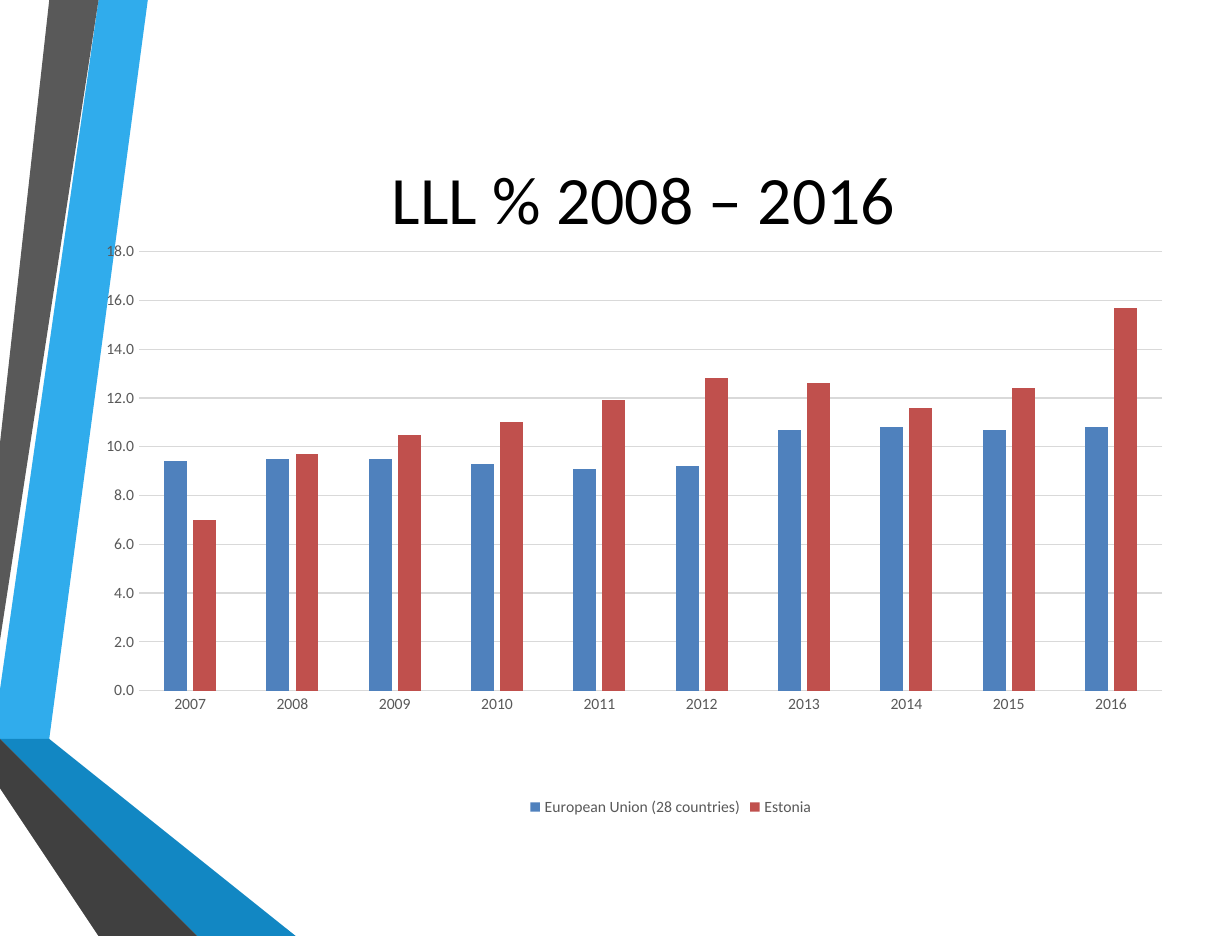
from dataclasses import dataclass
from lxml.etree import SubElement
from pptx import Presentation
from pptx.chart.data import CategoryChartData
from pptx.dml.color import RGBColor
from pptx.enum.chart import XL_CHART_TYPE, XL_LEGEND_POSITION, XL_TICK_MARK
from pptx.enum.text import MSO_ANCHOR, PP_ALIGN
from pptx.oxml import parse_xml
from pptx.oxml.ns import nsdecls, qn
from pptx.util import Cm, Pt


@dataclass(frozen=True)
class Theme:
    """Colours, font and type sizes of the slide."""
    font: str = "Calibri"
    ink: str = "000000"
    label: str = "595959"
    grid: str = "D9D9D9"
    union: str = "4F81BD"
    nation: str = "C0504D"
    sky: str = "30ACEC"
    blue: str = "1287C3"
    navy: str = "0C5A82"
    ash: str = "595959"
    coal: str = "404040"
    soot: str = "262626"
    head: int = 39
    body: int = 10
    small: int = 9


THEME = Theme()
WIDE, HIGH = 25, 19

BANDS = [
    (THEME.sky, [(0, 13.77), (0, 14.58), (0.56, 14.66), (2.92, 0), (2.24, 0)]),
    (THEME.ash, [(2.08, 0), (1.37, 0), (0, 8.53), (0, 12.83)]),
    (THEME.soot, [(0, 15.7), (0, 15.75), (2.34, HIGH), (2.49, HIGH)]),
    (THEME.navy, [(0, 14.68), (3.91, HIGH), (4.06, HIGH)]),
    (THEME.blue, [(0, 14.68), (4.06, HIGH), (5.84, HIGH), (0.56, 14.66), (0, 14.58)]),
    (THEME.coal, [(0, 15.7), (2.49, HIGH), (3.76, HIGH), (0, 14.83)]),
]

YEARS = [str(year) for year in range(2007, 2017)]
SERIES = [
    ("European Union (28 countries)", THEME.union,
     [9.4, 9.5, 9.5, 9.3, 9.1, 9.2, 10.7, 10.8, 10.7, 10.8]),
    ("Estonia", THEME.nation,
     [7, 9.7, 10.5, 11, 11.9, 12.8, 12.6, 11.6, 12.4, 15.7]),
]


def style(font, size, color):
    """Set the face, size and colour of a font."""
    font.name = THEME.font
    font.size = Pt(size)
    font.color.rgb = RGBColor.from_string(color)


def write(frame, text, size=THEME.body, color=THEME.ink, align=PP_ALIGN.LEFT,
          anchor=MSO_ANCHOR.TOP):
    """Put formatted text in a frame."""
    frame.word_wrap = True
    frame.vertical_anchor = anchor
    para = frame.paragraphs[0]
    para.alignment = align
    run = para.add_run()
    run.text = text
    style(run.font, size, color)


def rule(line, color):
    """Draw a thin chart line."""
    line.color.rgb = RGBColor.from_string(color)
    line.width = Pt(0.75)


def layout(**parts):
    """Make a manual chart layout from fractions of the chart."""
    root = parse_xml(f"<c:layout {nsdecls('c')}><c:manualLayout/></c:layout>")
    for tag, value in parts.items():
        SubElement(root[0], qn(f"c:{tag}")).set("val", str(value))
    return root


def add_bands(slide, left, top):
    """Draw the folded ribbons from the given corner."""
    for color, points in BANDS:
        pen = slide.shapes.build_freeform(*points[0], scale=Cm(1))
        pen.add_line_segments(points[1:], close=True)
        band = pen.convert_to_shape(Cm(left), Cm(top))
        band.shadow.inherit = False
        band.fill.solid()
        band.fill.fore_color.rgb = RGBColor.from_string(color)
        band.line.fill.background()


def add_title(slide, box):
    """Place the title in its box above the ribbons."""
    title = slide.shapes.title
    title.left, title.top, title.width, title.height = map(Cm, box)
    write(title.text_frame, "LLL % 2008 – 2016 ", size=THEME.head,
          align=PP_ALIGN.CENTER, anchor=MSO_ANCHOR.MIDDLE)
    title.element.getparent().append(title.element)


def add_columns(slide, box):
    """Place the column chart in its box."""
    data = CategoryChartData(number_format="0.0")
    data.categories = YEARS
    for name, _, values in SERIES:
        data.add_series(name, values)
    chart = slide.shapes.add_chart(
        XL_CHART_TYPE.COLUMN_CLUSTERED, *map(Cm, box), data).chart
    chart.has_title = False
    style(chart.font, THEME.body, THEME.ink)

    plot = chart.plots[0]
    plot.vary_by_categories = False
    plot.gap_width, plot.overlap = 219, -27
    for series, (_, color, _) in zip(plot.series, SERIES):
        series.format.fill.solid()
        series.format.fill.fore_color.rgb = RGBColor.from_string(color)

    years, rates = chart.category_axis, chart.value_axis
    for axis in (years, rates):
        axis.major_tick_mark = axis.minor_tick_mark = XL_TICK_MARK.NONE
        style(axis.tick_labels.font, THEME.small, THEME.label)
    years.has_major_gridlines = False
    rule(years.format.line, THEME.grid)
    rates.minimum_scale, rates.maximum_scale, rates.major_unit = 0, 18, 2
    rates.format.line.fill.background()
    rule(rates.major_gridlines.format.line, THEME.grid)
    rates.tick_labels.number_format = r"#\ ##0.0"
    rates.tick_labels.number_format_is_linked = False

    chart.has_legend = True
    legend = chart.legend
    legend.position = XL_LEGEND_POSITION.BOTTOM
    legend.include_in_layout = False
    style(legend.font, THEME.small, THEME.label)

    space = chart.element.find(".//" + qn("c:plotArea"))
    for old in space.findall(qn("c:layout")):
        space.remove(old)
    space.insert(0, layout(layoutTarget="inner", xMode="edge", yMode="edge",
                           x=0.05, y=0.149, w=0.927, h=0.601))
    spot = chart.element.find(".//" + qn("c:legendPos"))
    for old in spot.getparent().findall(qn("c:layout")):
        spot.getparent().remove(old)
    spot.addnext(layout(xMode="edge", yMode="edge", x=0.4, y=0.89))


def main():
    """Build and save the slide."""
    deck = Presentation()
    deck.slide_width, deck.slide_height = Cm(WIDE), Cm(HIGH)
    slide = deck.slides.add_slide(deck.slide_layouts.get_by_name("Title Only"))
    add_bands(slide, 0, 0)
    add_title(slide, (2.69, 1.27, 21.06, 5.49))
    add_columns(slide, (1.7, 2.9, 22.4, 14.83))
    deck.save("out.pptx")


if __name__ == "__main__":
    main()
